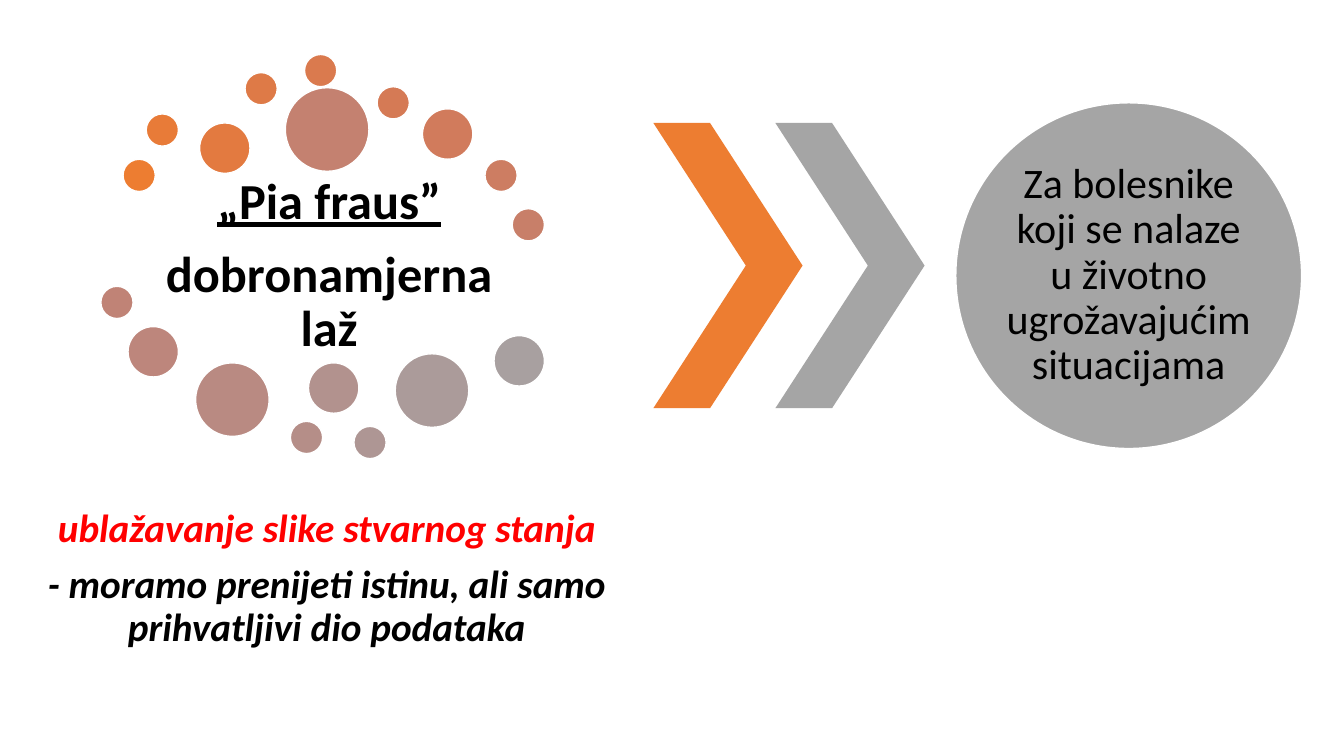
from pptx import Presentation
from pptx.dml.color import RGBColor
from pptx.enum.shapes import MSO_SHAPE
from pptx.enum.text import MSO_ANCHOR, PP_ALIGN
from pptx.util import Inches, Pt

OVAL, CHEVRON = MSO_SHAPE.OVAL, MSO_SHAPE.CHEVRON
MIDDLE, CENTER = MSO_ANCHOR.MIDDLE, PP_ALIGN.CENTER

FONT = "Calibri"
COLORS = {"orange": "ED7D31", "gray": "A5A5A5", "white": "FFFFFF",
          "black": "000000", "red": "FF0000"}

# Text boxes: left, top, width, height, margin, size, paragraphs (text, color, style)
TEXTS = [
    (1.31, 1.73, 3.91, 1.83, 0.04, 36, [
        ("„Pia fraus”", "black", {"bold": True, "underline": True}),
        ("dobronamjerna laž", "black", {"bold": True})]),
    (0, 4.78, 6.48, 1.93, 0.04, 28, [
        ("ublažavanje slike stvarnog stanja", "red", {"bold": True, "italic": True}),
        ("- moramo prenijeti istinu, ali samo prihvatljivi dio podataka", "black",
         {"bold": True, "italic": True})]),
    (9.98, 1.52, 2.43, 2.43, 0, 30, [
        ("Za bolesnike koji se nalaze u životno ugrožavajućim situacijama", "black", {})]),
]

# Ring of dots: left, top, size, fill
SMALL, MEDIUM, LARGE, LARGEST = 0.32, 0.5, 0.73, 0.83
DOTS = [
    (1.22, 1.58, SMALL, "ED7D31"), (1.45, 1.13, SMALL, "E87B38"),
    (1.98, 1.22, MEDIUM, "E37A40"), (2.43, 0.72, SMALL, "DE7A47"),
    (3.02, 0.54, SMALL, "DA7A4E"), (3.74, 0.86, SMALL, "D57A55"),
    (4.19, 1.08, MEDIUM, "D17B5C"), (4.81, 1.58, SMALL, "CD7D62"),
    (5.08, 2.07, SMALL, "C87F69"), (2.83, 0.87, LARGEST, "C48170"),
    (1.00, 2.84, SMALL, "C08376"), (1.27, 3.24, MEDIUM, "BD867C"),
    (1.94, 3.60, LARGE, "B98A82"), (2.88, 4.18, SMALL, "B58E88"),
    (3.06, 3.60, MEDIUM, "B2928E"), (3.51, 4.23, SMALL, "AE9694"),
    (3.92, 3.51, LARGE, "AB9B9A"), (4.90, 3.33, MEDIUM, "A8A0A0"),
]
CHEVRONS = [(6.48, "orange"), (7.69, "gray")]
CIRCLE = (9.48, 1.02, 3.43)


def add_shape(s, kind, left, top, width, height, fill):
    sp = s.shapes.add_shape(kind, Inches(left), Inches(top), Inches(width), Inches(height))
    sp.shadow.inherit = False
    sp.fill.solid()
    sp.fill.fore_color.rgb = RGBColor.from_string(fill)
    sp.line.fill.background()
    return sp


def add_disc(s, left, top, size, fill):
    sp = add_shape(s, OVAL, left, top, size, size, fill)
    sp.line.color.rgb = RGBColor.from_string(COLORS["white"])
    sp.line.width = Pt(1)


def add_text(s, left, top, width, height, margin, size, paragraphs):
    tf = s.shapes.add_textbox(Inches(left), Inches(top), Inches(width),
                              Inches(height)).text_frame
    tf.word_wrap = True
    tf.vertical_anchor = MIDDLE
    tf.margin_left = tf.margin_right = tf.margin_top = tf.margin_bottom = Inches(margin)
    for i, (text, color, style) in enumerate(paragraphs):
        p = tf.add_paragraph() if i else tf.paragraphs[0]
        p.text = text
        p.alignment = CENTER
        p.line_spacing = 0.9
        p.space_after = Pt(round(size * 0.35))
        p.font.name, p.font.size = FONT, Pt(size)
        p.font.color.rgb = RGBColor.from_string(COLORS[color])
        for name, value in style.items():
            setattr(p.font, name, value)


prs = Presentation()
prs.slide_width, prs.slide_height = Inches(13.33), Inches(7.5)
s = prs.slides.add_slide(prs.slide_layouts[6])

# Left side: title and explanation inside and below the dots
for box in TEXTS[:2]:
    add_text(s, *box)
for dot in DOTS:
    add_disc(s, *dot)

# Chevrons pointing to the result
for left, color in CHEVRONS:
    sp = add_shape(s, CHEVRON, left, 1.22, 1.48, 2.83, COLORS[color])
    sp.adjustments[0] = 0.62

# Result circle
add_disc(s, *CIRCLE, COLORS["gray"])
add_text(s, *TEXTS[2])

prs.save("out.pptx")
